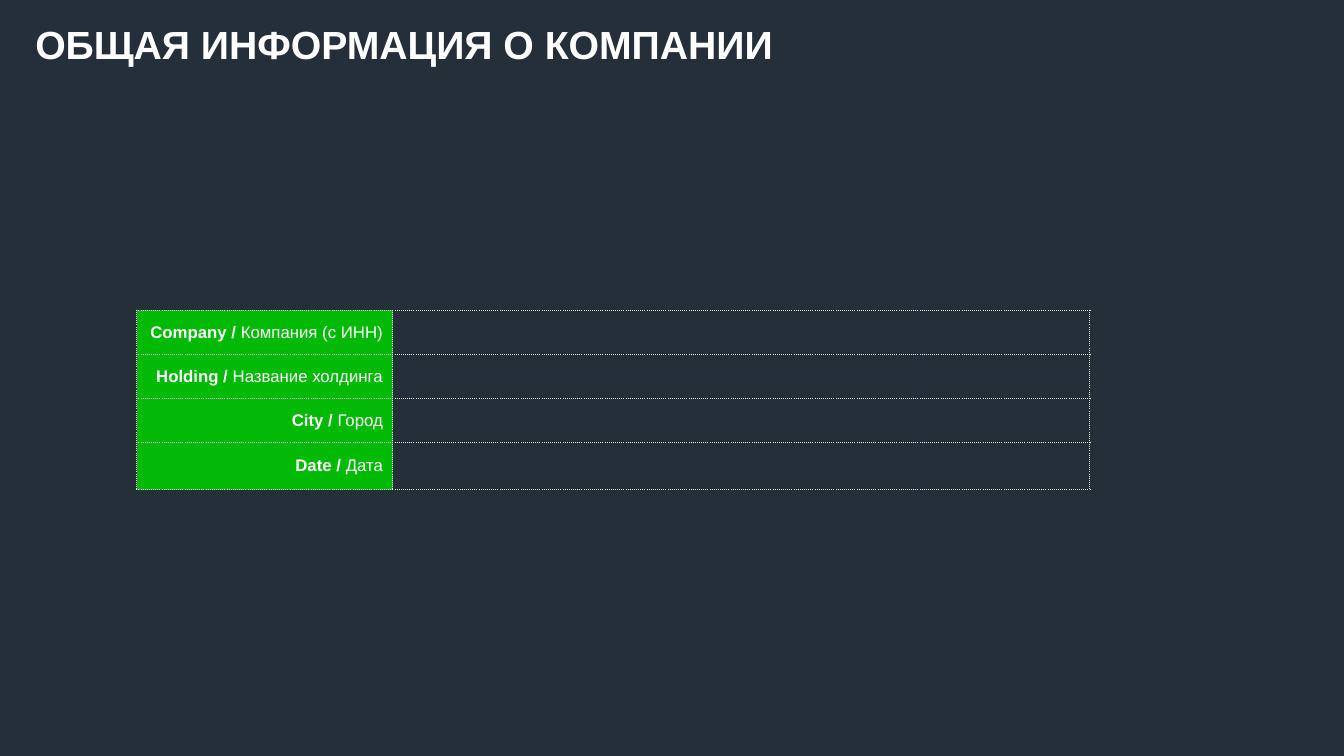
from dataclasses import dataclass

from lxml.etree import SubElement
from pptx import Presentation
from pptx.dml.color import RGBColor
from pptx.enum.text import MSO_ANCHOR, MSO_AUTO_SIZE, PP_ALIGN
from pptx.oxml.ns import qn
from pptx.util import Cm, Pt

# Content
TITLE = "ОБЩАЯ ИНФОРМАЦИЯ О КОМПАНИИ"
FIELDS = [
    ("Company / ", "Компания (с ИНН)"),
    ("Holding / ", "Название холдинга"),
    ("City / ", "Город"),
    ("Date / ", "Дата"),
]

# Layout in centimetres
TITLE_BOX = (0.64, 0.38, 20.85, 1.45)
TABLE_LEFT, TABLE_TOP = 3.45, 7.82
COLUMN_WIDTHS = (6.45, 17.55)
ROW_HEIGHT, LAST_ROW_HEIGHT = 1.11, 1.19


@dataclass(frozen=True)
class Theme:
    background: str = "252F3A"
    label_fill: str = "02B906"
    text: str = "FFFFFF"
    border: str = "FFFFFF"
    font: str = "Arial"
    title_size: int = 28
    label_size: int = 12
    border_width: int = 1


THEME = Theme()


def style_span(span, size, bold):
    span.font.name = THEME.font
    span.font.size = Pt(size)
    span.font.bold = bold
    span.font.color.rgb = RGBColor.from_string(THEME.text)


def add_dotted_borders(cell):
    properties = cell._tc.get_or_add_tcPr()
    for side in ("a:lnL", "a:lnR", "a:lnT", "a:lnB"):
        line = SubElement(properties, qn(side), w=str(Pt(THEME.border_width)))
        fill = SubElement(line, qn("a:solidFill"))
        SubElement(fill, qn("a:srgbClr"), val=THEME.border)
        SubElement(line, qn("a:prstDash"), val="sysDot")


def add_title(page):
    box = page.shapes.add_textbox(*map(Cm, TITLE_BOX))
    frame = box.text_frame
    frame.word_wrap = True
    frame.auto_size = MSO_AUTO_SIZE.SHAPE_TO_FIT_TEXT
    frame.text = TITLE
    style_span(frame.paragraphs[0].runs[0], THEME.title_size, True)


def fill_label(cell, parts):
    cell.fill.solid()
    cell.fill.fore_color.rgb = RGBColor.from_string(THEME.label_fill)
    cell.vertical_anchor = MSO_ANCHOR.MIDDLE
    cell.margin_left = cell.margin_right = Cm(0.25)
    cell.margin_top = cell.margin_bottom = Cm(0.1)
    para = cell.text_frame.paragraphs[0]
    para.alignment = PP_ALIGN.RIGHT
    for part, bold in zip(parts, (True, False)):
        span = para.add_run()
        span.text = part
        style_span(span, THEME.label_size, bold)


def add_company_table(page):
    heights = [ROW_HEIGHT] * (len(FIELDS) - 1) + [LAST_ROW_HEIGHT]
    table = page.shapes.add_table(
        len(FIELDS), len(COLUMN_WIDTHS), Cm(TABLE_LEFT), Cm(TABLE_TOP),
        Cm(sum(COLUMN_WIDTHS)), Cm(sum(heights)),
    ).table
    table.first_row = table.horz_banding = False
    for column, width in zip(table.columns, COLUMN_WIDTHS):
        column.width = Cm(width)
    for row, height, parts in zip(table.rows, heights, FIELDS):
        row.height = Cm(height)
        label, value = row.cells
        add_dotted_borders(label)
        add_dotted_borders(value)
        fill_label(label, parts)
        value.fill.background()


def main():
    deck = Presentation()
    deck.slide_width, deck.slide_height = Cm(33.87), Cm(19.05)
    page = deck.slides.add_slide(deck.slide_layouts[6])
    page.background.fill.solid()
    page.background.fill.fore_color.rgb = RGBColor.from_string(THEME.background)
    add_title(page)
    add_company_table(page)
    deck.save("out.pptx")


if __name__ == "__main__":
    main()
